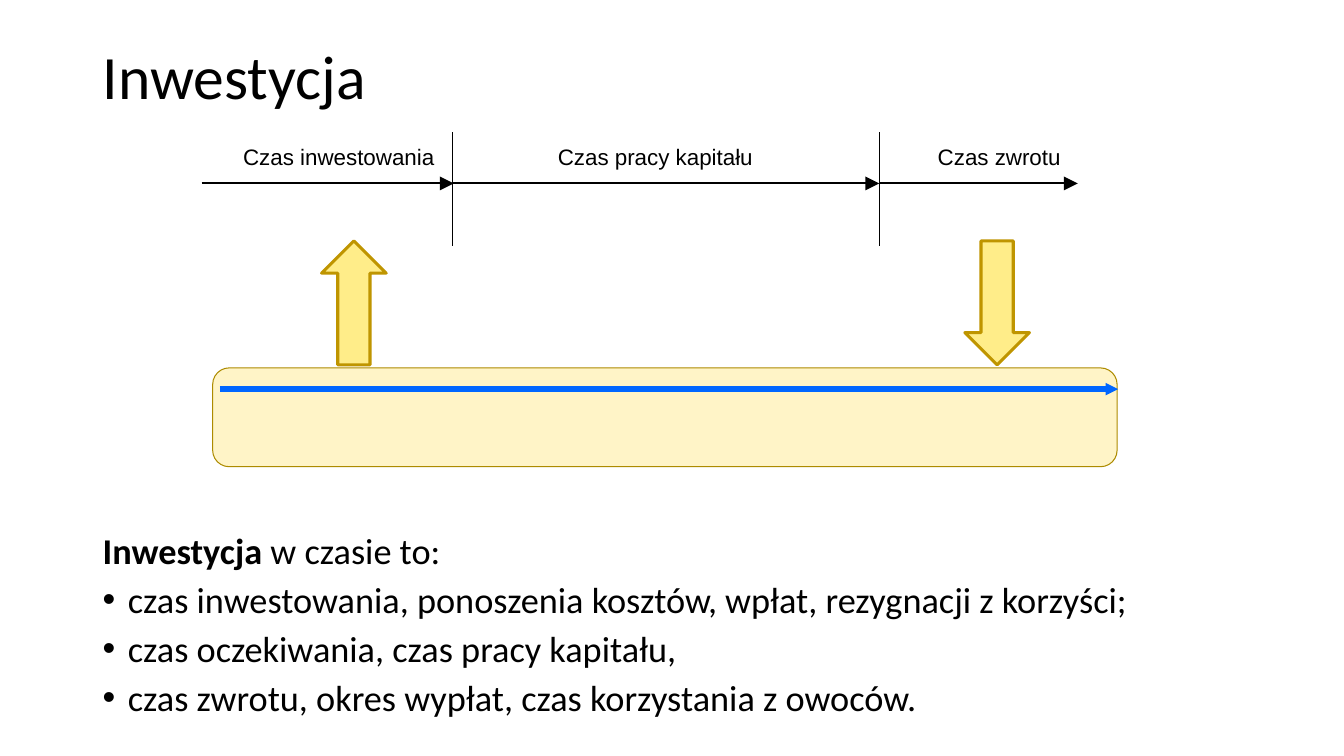
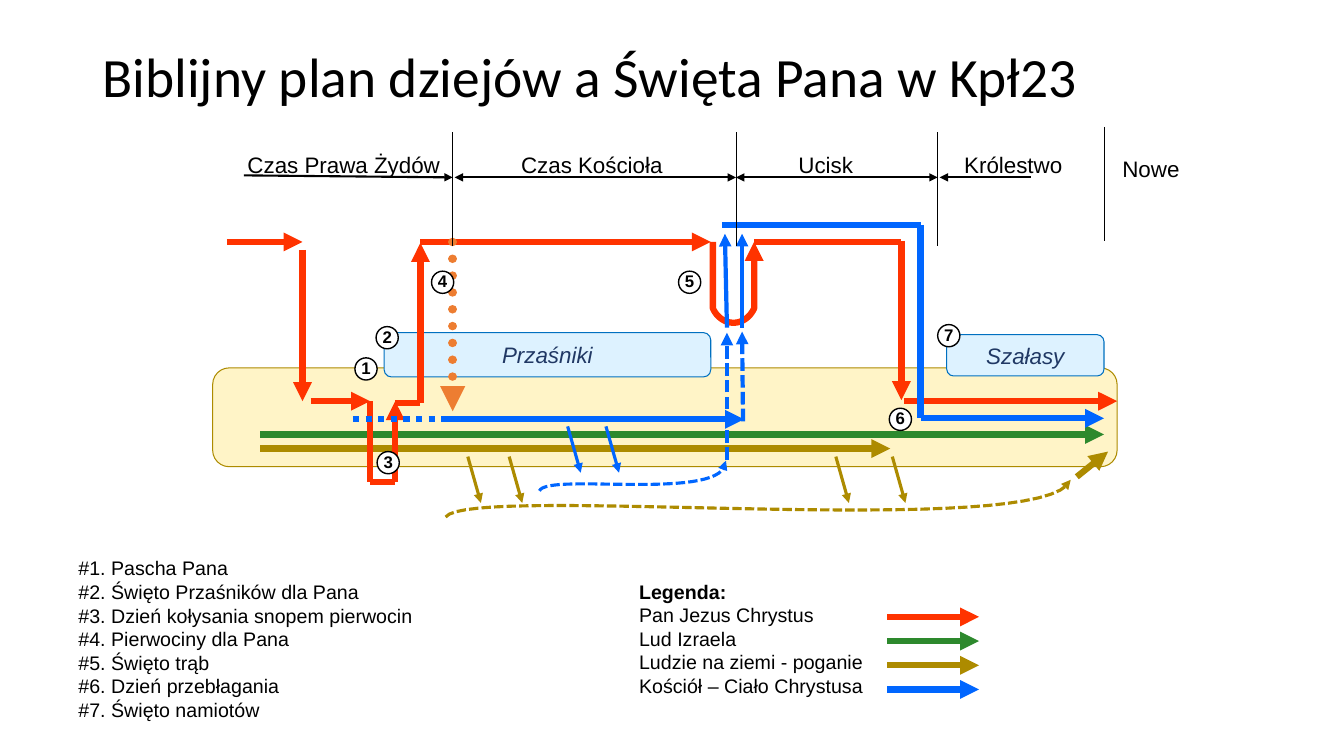
from lxml import etree
from pptx import Presentation
from pptx.dml.color import RGBColor
from pptx.enum.dml import MSO_LINE
from pptx.enum.shapes import MSO_CONNECTOR, MSO_SHAPE
from pptx.enum.text import MSO_ANCHOR, PP_ALIGN
from pptx.oxml.ns import qn
from pptx.util import Inches, Pt

BLACK = RGBColor(0x00, 0x00, 0x00)
WHITE = RGBColor(0xFF, 0xFF, 0xFF)
RED = RGBColor(0xFF, 0x33, 0x00)
BLUE = RGBColor(0x00, 0x66, 0xFF)
GREEN = RGBColor(0x2D, 0x89, 0x2D)
GOLD = RGBColor(0xAD, 0x8B, 0x00)
ORANGE = RGBColor(0xED, 0x7D, 0x31)
NAVY = RGBColor(0x20, 0x38, 0x64)
BAND_FILL = RGBColor(0xFF, 0xF4, 0xC7)
ARROW_FILL = RGBColor(0xFF, 0xED, 0x89)
ARROW_LINE = RGBColor(0xBF, 0x95, 0x00)
TAG_FILL = RGBColor(0xDD, 0xF2, 0xFF)
TAG_LINE = RGBColor(0x00, 0x70, 0xC0)

STRAIGHT = MSO_CONNECTOR.STRAIGHT
ROUNDED = MSO_SHAPE.ROUNDED_RECTANGLE
OVAL = MSO_SHAPE.OVAL
UP_ARROW = MSO_SHAPE.UP_ARROW
DOWN_ARROW = MSO_SHAPE.DOWN_ARROW
DOTS = MSO_LINE.ROUND_DOT
DASHES = MSO_LINE.SQUARE_DOT
LEFT, CENTER = PP_ALIGN.LEFT, PP_ALIGN.CENTER
TOP, MIDDLE = MSO_ANCHOR.TOP, MSO_ANCHOR.MIDDLE

THICK, MEDIUM, THIN = 4.5, 3, 2.25


def bezier(start, control_1, control_2, end, steps=32):
    """Points along a cubic curve, both ends included."""
    points = []
    for step in range(steps + 1):
        t = step / steps
        weights = ((1 - t) ** 3, 3 * t * (1 - t) ** 2, 3 * t * t * (1 - t), t ** 3)
        corners = (start, control_1, control_2, end)
        points.append(tuple(sum(weight * corner[axis] for weight, corner in zip(weights, corners))
                            for axis in (0, 1)))
    return points


class Deck:
    """Holds the shared style and the slide being drawn."""

    def __init__(self):
        self.presentation = Presentation()
        self.presentation.slide_width = Inches(13.33)
        self.presentation.slide_height = Inches(7.5)
        self.slide = None

    def new_slide(self, title, size):
        self.slide = self.presentation.slides.add_slide(self.presentation.slide_layouts[6])
        self.text((0.92, 0.4, 11.5, 0.78), [title], size, font="Calibri", anchor=MIDDLE,
                  line_spacing=0.9)

    def fill_text(self, shape, lines, size, font="Arial", color=BLACK, align=LEFT, anchor=TOP,
                  inset=None, bold=False, italic=False, line_spacing=None, space_before=None,
                  bulleted=False, wrap=True):
        """Fill a shape with paragraphs; a tuple line has a bold lead and a plain rest."""
        frame = shape.text_frame
        frame.word_wrap = wrap
        frame.vertical_anchor = anchor
        if inset is not None:
            frame.margin_left = frame.margin_right = Inches(inset)
            frame.margin_top = frame.margin_bottom = Inches(inset)
        for index, line in enumerate(lines):
            paragraph = frame.paragraphs[0] if index == 0 else frame.add_paragraph()
            paragraph.alignment = align
            if line_spacing:
                paragraph.line_spacing = line_spacing
            if space_before:
                paragraph.space_before = Pt(space_before)
            if isinstance(line, tuple):
                for part, is_bold in zip(line, (True, False)):
                    run = paragraph.add_run()
                    run.text = part
                    run.font.bold = is_bold
            else:
                paragraph.add_run().text = line
                paragraph.font.bold = bold
                if bulleted:
                    self.bullet(paragraph)
            paragraph.font.name = font
            paragraph.font.size = Pt(size)
            paragraph.font.color.rgb = color
            paragraph.font.italic = italic

    def bullet(self, paragraph):
        properties = paragraph._p.get_or_add_pPr()
        properties.set("marL", str(Inches(0.25)))
        properties.set("indent", str(-Inches(0.25)))
        defaults = properties.find(qn("a:defRPr"))
        defaults.addprevious(etree.Element(qn("a:buFont"), typeface="Arial"))
        defaults.addprevious(etree.Element(qn("a:buChar"), char="•"))

    def text(self, box, lines, size, **style):
        shape = self.slide.shapes.add_textbox(*map(Inches, box))
        self.fill_text(shape, lines, size, **style)

    def label(self, box, text):
        self.text(box, [text], 16, align=CENTER, anchor=MIDDLE, inset=0.04)

    def shape(self, kind, box, fill, line, width):
        shape = self.slide.shapes.add_shape(kind, *map(Inches, box))
        shape.shadow.inherit = False
        shape.fill.solid()
        shape.fill.fore_color.rgb = fill
        shape.line.color.rgb = line
        shape.line.width = Pt(width)
        return shape

    def band(self):
        self.shape(ROUNDED, (2.11, 3.65, 8.97, 0.98), BAND_FILL, GOLD, 0.75)

    def tag(self, box, text):
        shape = self.shape(ROUNDED, box, TAG_FILL, TAG_LINE, 0.75)
        self.fill_text(shape, [text], 16, color=NAVY, align=CENTER, anchor=MIDDLE, italic=True,
                       wrap=False)

    def badge(self, left, top, number):
        shape = self.shape(OVAL, (left, top, 0.22, 0.22), WHITE, BLACK, 1)
        self.fill_text(shape, [str(number)], 12, align=CENTER, anchor=MIDDLE, inset=0, bold=True,
                       line_spacing=0.9, wrap=False)

    def stroke(self, shape, color, width, head, tail, dash, size, round_cap=False):
        shape.line.color.rgb = color
        shape.line.width = Pt(width)
        if dash is not None:
            shape.line.dash_style = dash
        outline = shape.element.spPr.find(qn("a:ln"))
        if round_cap:
            outline.set("cap", "rnd")
        for wanted, name in ((head, "a:headEnd"), (tail, "a:tailEnd")):
            if wanted:
                etree.SubElement(outline, qn(name), type="triangle", w=size, len=size)

    def line(self, start, end, color, width, head=False, tail=False, dash=None, size="med",
             round_cap=False):
        connector = self.slide.shapes.add_connector(STRAIGHT, *map(Inches, start + end))
        self.stroke(connector, color, width, head, tail, dash, size, round_cap)
        etree.SubElement(connector.element.spPr, qn("a:effectLst"))

    def arrow(self, start, end, color, width=THICK, **style):
        self.line(start, end, color, width, tail=True, **style)

    def curve(self, points, color, width, dash=None):
        """Open outline through the points, ending in an arrowhead."""
        places = [(Inches(x), Inches(y)) for x, y in points]
        builder = self.slide.shapes.build_freeform(*places[0])
        builder.add_line_segments(places[1:], close=False)
        shape = builder.convert_to_shape()
        shape.shadow.inherit = False
        shape.fill.background()
        self.stroke(shape, color, width, False, True, dash, "med")

    def divider(self, x, top=1.31):
        self.line((x, top), (x, top + 1.13), BLACK, 0.5)


def investment_slide(deck):
    deck.new_slide("Inwestycja", 44)
    deck.band()
    deck.label((4.83, 1.38, 3.34, 0.35), "Czas pracy kapitału")
    deck.label((2.15, 1.38, 2.42, 0.35), "Czas inwestowania")
    deck.label((9.07, 1.38, 1.68, 0.35), "Czas zwrotu")
    for x in (4.49, 8.72):
        deck.divider(x)
    for left, right in ((2, 4.5), (4.49, 8.72), (8.72, 10.69)):
        deck.arrow((left, 1.82), (right, 1.82), BLACK, 1.5, size="lg")
    for kind, left in ((UP_ARROW, 3.19), (DOWN_ARROW, 9.57)):
        deck.shape(kind, (left, 2.39, 0.64, 1.23), ARROW_FILL, ARROW_LINE, 2.25)
    deck.arrow((2.18, 3.86), (11.09, 3.86), BLUE, size="sm")
    deck.text((0.92, 5.28, 11.5, 2.07), [
        ("Inwestycja", " w czasie to:"),
        "czas inwestowania, ponoszenia kosztów, wpłat, rezygnacji z korzyści;",
        "czas oczekiwania, czas pracy kapitału,",
        "czas zwrotu, okres wypłat, czas korzystania z owoców.",
    ], 25.9, font="Calibri", line_spacing=0.8, space_before=10, bulleted=True)


def draw_paths(deck):
    """Coloured routes of the four groups in the legend."""
    deck.arrow((2.58, 4.45), (8.83, 4.45), GOLD)
    deck.arrow((2.58, 4.31), (10.95, 4.31), GREEN)

    for start, end in (
        ((4.17, 2.4), (7.05, 2.4)), ((4.17, 4), (4.17, 2.41)), ((3, 2.48), (3, 3.98)),
        ((3.08, 3.98), (3.67, 3.98)), ((8.94, 2.39), (8.94, 3.97)), ((2.25, 2.4), (3, 2.4)),
        ((8.97, 3.98), (11.08, 3.98)), ((3.92, 4.78), (3.92, 3.98)),
    ):
        deck.arrow(start, end, RED)
    for start, end in (
        ((7.48, 2.4), (8.94, 2.4)), ((3.67, 3.98), (3.67, 4.78)),
        ((3.67, 4.78), (3.92, 4.78)), ((3.92, 4), (4.17, 4)),
    ):
        deck.line(start, end, RED, THICK)
    dip = bezier((7.07, 3.06), (7.16, 3.25), (7.39, 3.25), (7.48, 3.06))
    deck.curve([(7.07, 2.4), *dip, (7.48, 2.4)], RED, THICK)

    deck.arrow((4.49, 2.4), (4.49, 4.08), ORANGE, 6, dash=DOTS, round_cap=True)

    deck.line((3.5, 4.16), (4.67, 4.16), BLUE, THICK, dash=DOTS)
    deck.line((7.16, 2.23), (9.13, 2.23), BLUE, THICK)
    deck.line((9.13, 2.23), (9.13, 4.15), BLUE, THICK)
    deck.arrow((4.41, 4.16), (7.38, 4.16), BLUE)
    deck.arrow((9.13, 4.15), (10.95, 4.15), BLUE)
    deck.arrow((7.36, 3.25), (7.36, 2.32), BLUE, MEDIUM)
    deck.arrow((7.21, 3.25), (7.19, 2.32), BLUE, MEDIUM)
    deck.arrow((7.37, 4.18), (7.36, 3.29), BLUE, MEDIUM, dash=DASHES)
    deck.arrow((7.21, 4.56), (7.21, 3.3), BLUE, MEDIUM, dash=DASHES)
    deck.curve(bezier((5.35, 4.87), (5.43, 4.68), (7.21, 4.99), (7.2, 4.57)), BLUE, THIN, DASHES)

    deck.curve(bezier((4.42, 5.13), (4.65, 4.79), (10.4, 5.38), (10.62, 4.76)), GOLD, THIN, DASHES)
    deck.arrow((10.68, 4.73), (10.99, 4.48), GOLD)
    for color, top, lefts in ((GOLD, 4.53, (4.64, 5.05, 8.29, 8.85)), (BLUE, 4.23, (5.63, 6.01))):
        for left in lefts:
            deck.arrow((left, top), (left + 0.13, top + 0.46), color, THIN)


def draw_periods(deck):
    """Time axis above the routes."""
    for x in (4.49, 7.3, 9.3):
        deck.divider(x)
    deck.divider(10.95, 1.26)
    deck.line((4.49, 1.76), (2.42, 1.74), BLACK, 1.5, head=True)
    deck.line((9.32, 1.76), (10.23, 1.76), BLACK, 1.5, head=True)
    for left, right in ((4.51, 7.3), (7.3, 9.3)):
        deck.line((left, 1.76), (right, 1.76), BLACK, 1.5, head=True, tail=True)
    for left, top, width, text in (
        (2.33, 1.46, 2.16, "Czas Prawa Żydów"), (4.91, 1.46, 1.92, "Czas Kościoła"),
        (7.62, 1.46, 1.14, "Ucisk"), (9.43, 1.46, 1.24, "Królestwo"),
        (10.95, 1.5, 0.93, "Nowe"),
    ):
        deck.label((left, top, width, 0.35), text)


def feasts_slide(deck):
    deck.new_slide("Biblijny plan dziejów a Święta Pana w Kpł23", 39.6)
    deck.band()
    deck.tag((9.39, 3.32, 1.56, 0.41), "Szałasy")
    deck.tag((3.81, 3.3, 3.24, 0.44), "Przaśniki")
    draw_paths(deck)
    draw_periods(deck)
    badge_places = ((3.52, 3.55), (3.73, 3.24), (3.74, 4.48), (4.28, 2.69), (6.73, 2.69),
                    (8.82, 4.05), (9.3, 3.22))
    for number, (left, top) in enumerate(badge_places, 1):
        deck.badge(left, top, number)

    feasts = ("Pascha Pana", "Święto Przaśników dla Pana", "Dzień kołysania snopem pierwocin",
              "Pierwociny dla Pana", "Święto trąb", "Dzień przebłagania", "Święto namiotów")
    deck.text((0.68, 5.47, 5.4, 1.75),
              [f"#{number}. {feast}" for number, feast in enumerate(feasts, 1)], 14)

    legend = (("Pan Jezus Chrystus", RED), ("Lud Izraela", GREEN),
              ("Ludzie na ziemi - poganie", GOLD), ("Kościół – Ciało Chrystusa", BLUE))
    deck.text((6.24, 5.7, 2.52, 1.28), [("Legenda:",), *(name for name, _ in legend)], 14)
    for row, (_, color) in enumerate(legend):
        y = 6.12 + 0.24 * row
        deck.arrow((8.8, y), (9.71, y), color)


def main():
    deck = Deck()
    investment_slide(deck)
    feasts_slide(deck)
    deck.presentation.save("out.pptx")


if __name__ == "__main__":
    main()
